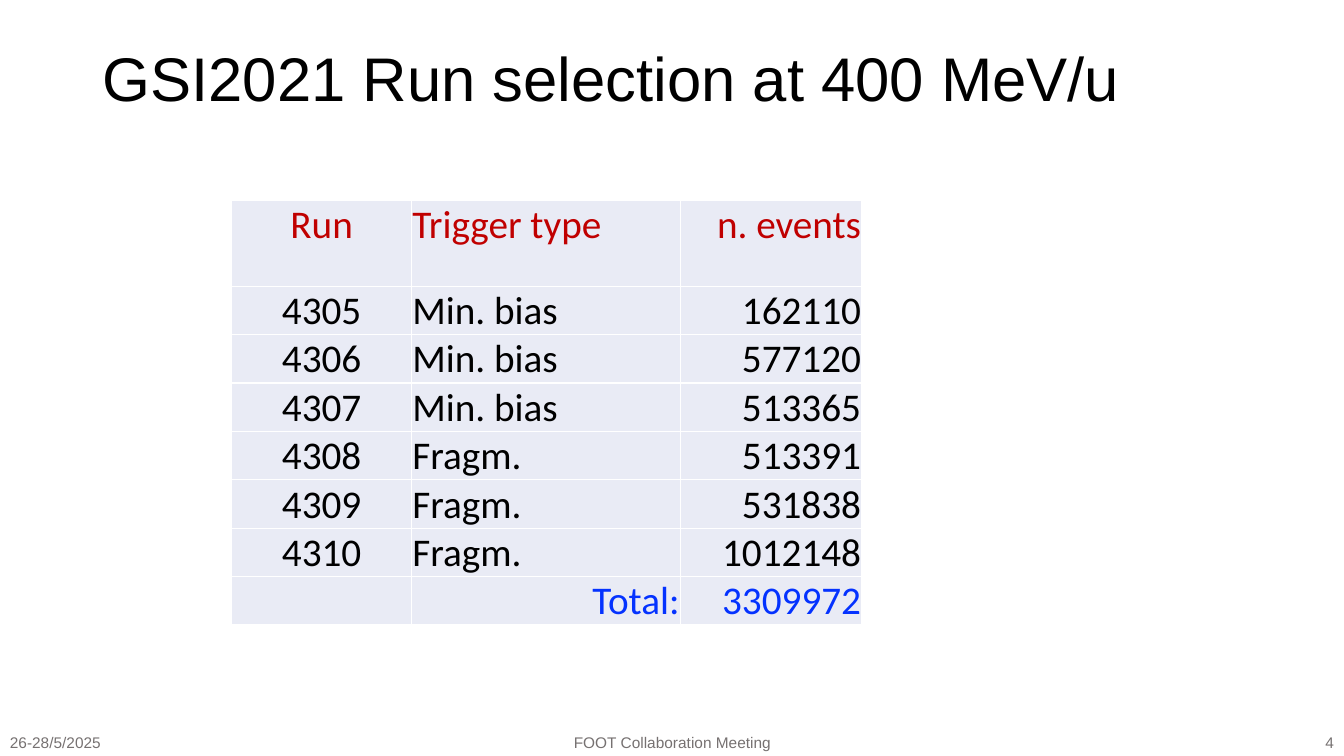
from pptx import Presentation
from pptx.dml.color import RGBColor
from pptx.enum.text import MSO_ANCHOR as ANCHOR, PP_ALIGN as ALIGN
from pptx.oxml import parse_xml
from pptx.oxml.ns import nsdecls
from pptx.util import Inches, Pt

COLORS = {
    "title": "000000",
    "footer": "767171",
    "header": "C00000",
    "body": "000000",
    "total": "0432FF",
    "cell": "E9EBF5",
    "border": "FFFFFF",
}


def format_text(text_frame, align, size, font_name, color):
    paragraph = text_frame.paragraphs[0]
    paragraph.alignment = align
    for run in paragraph.runs:
        run.font.size = Pt(size)
        run.font.name = font_name
        run.font.color.rgb = RGBColor.from_string(COLORS[color])


def add_border(cell, side):
    cell_properties = cell._tc.get_or_add_tcPr()
    cell_properties.append(parse_xml(
        f'<a:{side} {nsdecls("a")} w="12700"><a:solidFill>'
        f'<a:srgbClr val="{COLORS["border"]}"/></a:solidFill></a:{side}>'
    ))


presentation = Presentation()
presentation.slide_width = Inches(13.33)
presentation.slide_height = Inches(7.5)
slide = presentation.slides.add_slide(presentation.slide_layouts[6])

texts = [
    ("GSI2021 Run selection at 400 MeV/u", 0.92, 0.08, 11.5, 1.45, ALIGN.LEFT, 44, "title"),
    ("26-28/5/2025", 0, 7.22, 3, 0.28, ALIGN.LEFT, 11, "footer"),
    ("FOOT Collaboration Meeting", 4.42, 7.22, 4.5, 0.28, ALIGN.CENTER, 11, "footer"),
    ("4", 10.33, 7.22, 3, 0.28, ALIGN.RIGHT, 11, "footer"),
]
for text, left, top, width, height, align, size, color in texts:
    box = slide.shapes.add_textbox(Inches(left), Inches(top), Inches(width), Inches(height))
    text_frame = box.text_frame
    text_frame.word_wrap = True
    text_frame.vertical_anchor = ANCHOR.MIDDLE
    text_frame.text = text
    if color == "title":
        text_frame.paragraphs[0].line_spacing = 0.9
    format_text(text_frame, align, size, "Arial", color)

rows = [
    ("Run", "Trigger type", "n. events"),
    ("4305", "Min. bias", "162110"),
    ("4306", "Min. bias", "577120"),
    ("4307", "Min. bias", "513365"),
    ("4308", "Fragm.", "513391"),
    ("4309", "Fragm.", "531838"),
    ("4310", "Fragm.", "1012148"),
    ("", "Total:", "3309972"),
]
column_widths = [1.78, 2.67, 1.8]
column_aligns = [ALIGN.CENTER, ALIGN.LEFT, ALIGN.RIGHT]
last_row = len(rows) - 1

table = slide.shapes.add_table(
    len(rows), len(column_widths), Inches(2.3), Inches(1.99), Inches(6.25), Inches(4.21)
).table
for column, width in zip(table.columns, column_widths):
    column.width = Inches(width)

for row_index, values in enumerate(rows):
    table.rows[row_index].height = Inches(0.85 if row_index == 0 else 0.48)
    color = {0: "header", last_row: "total"}.get(row_index, "body")
    for column_index, value in enumerate(values):
        cell = table.cell(row_index, column_index)
        cell.margin_left = cell.margin_right = cell.margin_top = Inches(0.01)
        cell.margin_bottom = 0
        cell.vertical_anchor = ANCHOR.TOP if row_index == 0 else ANCHOR.BOTTOM
        for side in ("lnL", "lnR", "lnT", "lnB"):
            add_border(cell, side)
        cell.fill.solid()
        cell.fill.fore_color.rgb = RGBColor.from_string(COLORS["cell"])
        cell.text_frame.text = value
        align = ALIGN.RIGHT if row_index == last_row else column_aligns[column_index]
        format_text(cell.text_frame, align, 28, "Calibri", color)

presentation.save("out.pptx")
